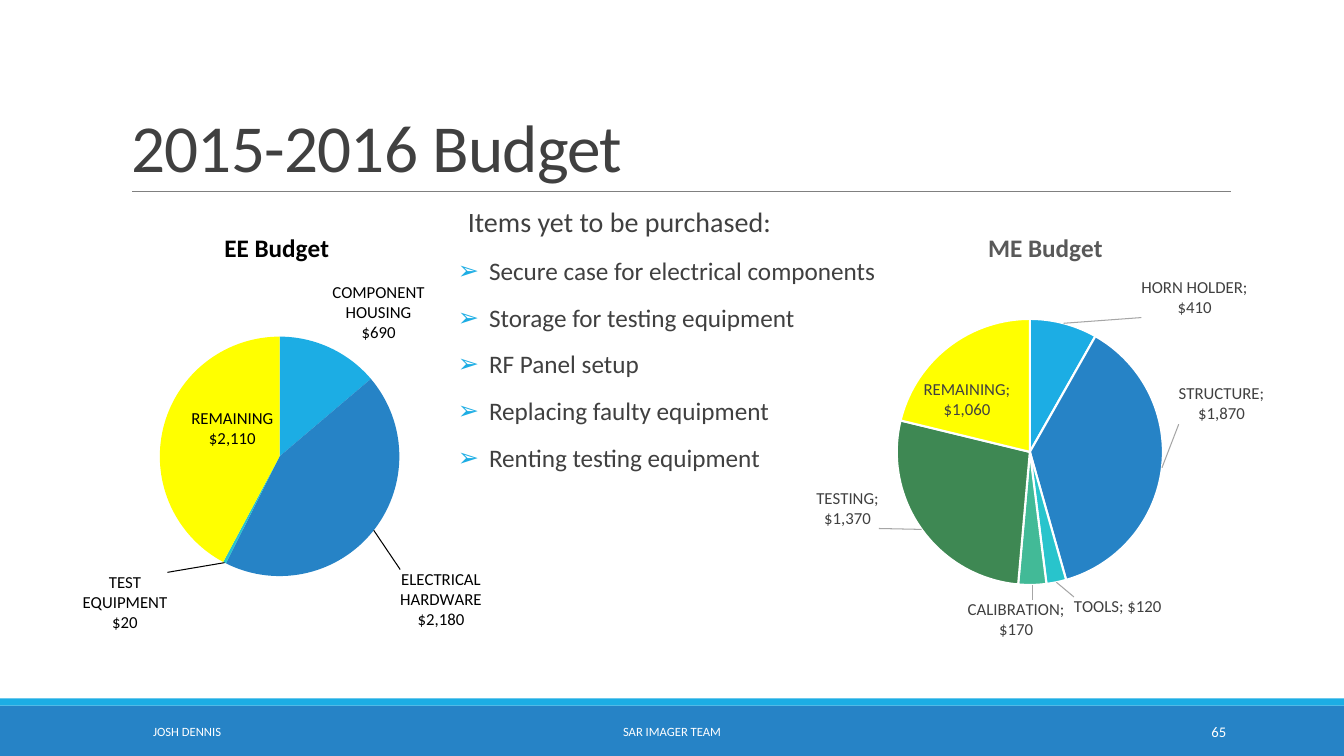
from lxml.etree import SubElement
from pptx import Presentation
from pptx.chart.data import CategoryChartData
from pptx.dml.color import RGBColor
from pptx.enum.chart import XL_CHART_TYPE, XL_LABEL_POSITION
from pptx.enum.shapes import MSO_CONNECTOR, MSO_SHAPE
from pptx.enum.text import MSO_ANCHOR, MSO_AUTO_SIZE, PP_ALIGN
from pptx.oxml import parse_xml
from pptx.oxml.ns import nsdecls, qn
from pptx.util import Inches, Pt

SKY = RGBColor(0x1C, 0xAD, 0xE4)
BLUE = RGBColor(0x26, 0x83, 0xC6)
AQUA = RGBColor(0x28, 0xC4, 0xCC)
MINT = RGBColor(0x42, 0xBA, 0x97)
GREEN = RGBColor(0x3E, 0x88, 0x53)
YELLOW = RGBColor(0xFF, 0xFF, 0x00)
BLACK = RGBColor(0x00, 0x00, 0x00)
DARK = RGBColor(0x40, 0x40, 0x40)
SLATE = RGBColor(0x59, 0x59, 0x59)
GRAY = RGBColor(0x80, 0x80, 0x80)
SILVER = RGBColor(0xA6, 0xA6, 0xA6)
WHITE = RGBColor(0xFF, 0xFF, 0xFF)

OUT, MIDDLE = XL_LABEL_POSITION.OUTSIDE_END, XL_LABEL_POSITION.CENTER
DOLLARS = '"$"#,##0'

EE_BUDGET = [
    ("COMPONENT HOUSING", 690, SKY, OUT, (0, 0)),
    ("ELECTRICAL HARDWARE", 2180, BLUE, OUT, (0.04, 0.08)),
    ("TEST EQUIPMENT", 20, AQUA, OUT, (-0.1, 0.01)),
    ("REMAINING", 2110, YELLOW, MIDDLE, (0.02, -0.03)),
]
ME_BUDGET = [
    ("HORN HOLDER", 410, SKY, OUT, (0.14, 0)),
    ("STRUCTURE", 1870, BLUE, OUT, (0.02, -0.19)),
    ("TOOLS", 120, AQUA, OUT, (0.03, 0.02)),
    ("CALIBRATION", 170, MINT, OUT, (-0.03, 0.02)),
    ("TESTING", 1370, GREEN, OUT, (-0.07, -0.1)),
    ("REMAINING", 1060, YELLOW, MIDDLE, (-0.04, 0)),
]
ITEMS = [
    "Secure case for electrical components",
    "Storage for testing equipment",
    "RF Panel setup",
    "Replacing faulty equipment",
    "Renting testing equipment",
]


def apply(target, **values):
    for name, value in values.items():
        setattr(target, name, value)


def layout_xml(modes="", **fractions):
    parts = [f'<c:{axis}Mode val="edge"/>' for axis in modes]
    parts += [f'<c:{name} val="{value}"/>' for name, value in fractions.items()]
    inner = "".join(parts)
    return parse_xml(f'<c:layout {nsdecls("c")}><c:manualLayout>{inner}</c:manualLayout></c:layout>')


class BudgetPage:
    font_name = "Calibri"

    def __init__(self, deck):
        self.page = deck.slides.add_slide(deck.slide_layouts[1])

    def style(self, font, size, color, bold=False):
        apply(font, name=self.font_name, size=Pt(size), bold=bold)
        font.color.rgb = color

    def place(self, box, left, top, width, height):
        apply(box, left=Inches(left), top=Inches(top), width=Inches(width), height=Inches(height))

    def bar(self, top, height, color):
        box = self.page.shapes.add_shape(
            MSO_SHAPE.RECTANGLE, 0, Inches(top), Inches(13.33), Inches(height))
        box.shadow.inherit = False
        box.fill.solid()
        box.fill.fore_color.rgb = color
        box.line.fill.background()

    def rule(self, left, right, top):
        line = self.page.shapes.add_connector(
            MSO_CONNECTOR.STRAIGHT, Inches(left), Inches(top), Inches(right), Inches(top))
        line.line.color.rgb = GRAY
        line.line.width = Pt(0.5)
        SubElement(line._element.spPr, qn("a:effectLst"))

    def title(self, text):
        box = self.page.shapes.title
        self.place(box, 1.2, 0.31, 11, 1.59)
        apply(box.text_frame, text=text, vertical_anchor=MSO_ANCHOR.BOTTOM,
              auto_size=MSO_AUTO_SIZE.NONE)
        para = box.text_frame.paragraphs[0]
        apply(para, alignment=PP_ALIGN.LEFT, line_spacing=0.85)
        span = para.runs[0]
        self.style(span.font, 48, DARK)
        span.font._element.set("spc", "-50")

    def bullets(self, heading, items):
        box = self.page.placeholders[1]
        self.place(box, 4.54, 2.02, 4.34, 3.59)
        frame = box.text_frame
        apply(frame, text="\n".join([heading, *items]), margin_left=0, margin_right=0,
              auto_size=MSO_AUTO_SIZE.NONE, vertical_anchor=MSO_ANCHOR.TOP)
        for index, para in enumerate(frame.paragraphs):
            size, indent, mark = (18, 0.31, "➢") if index else (20, 0.1, " ")
            apply(para, line_spacing=0.9, space_before=Pt(12), space_after=Pt(2))
            self.style(para.runs[0].font, size, DARK)
            properties = para._p.get_or_add_pPr()
            properties.set("marL", str(Inches(indent)))
            properties.set("indent", str(-Inches(indent)))
            color = SubElement(properties, qn("a:buClr"))
            SubElement(color, qn("a:srgbClr"), val=str(SKY))
            SubElement(properties, qn("a:buChar"), char=mark)

    def footer(self, text, left, width, size, alignment):
        box = self.page.shapes.add_textbox(
            Inches(left), Inches(7.06), Inches(width), Inches(0.4))
        apply(box.text_frame, text=text, word_wrap=True, vertical_anchor=MSO_ANCHOR.MIDDLE)
        para = box.text_frame.paragraphs[0]
        para.alignment = alignment
        self.style(para.runs[0].font, size, WHITE)

    def pie(self, title, slices, left, plot, title_left, title_color, label_color,
            leader_color, separator, edge=None):
        data = CategoryChartData(number_format=DOLLARS)
        data.categories = [entry[0] for entry in slices]
        data.add_series("Series 1", [entry[1] for entry in slices])
        chart = self.page.shapes.add_chart(
            XL_CHART_TYPE.PIE, Inches(left), Inches(2.02), Inches(5.4), Inches(4.4), data).chart
        apply(chart, has_legend=False, has_title=True)
        self.style(chart.font, 12, label_color)
        chart.chart_title.text_frame.text = title
        self.style(chart.chart_title.text_frame.paragraphs[0].runs[0].font, 18, title_color, True)
        chart.chart_title.include_in_layout = False
        space = chart._chartSpace
        space.find(qn("c:chart")).addnext(parse_xml(
            f'<c:spPr {nsdecls("c", "a")}><a:noFill/><a:ln><a:noFill/></a:ln></c:spPr>'))
        for old in space.xpath("c:chart/c:title/c:layout | .//c:plotArea/c:layout"):
            old.getparent().remove(old)
        space.xpath("c:chart/c:title/c:tx")[0].addnext(layout_xml("xy", x=title_left, y=0.05))
        area = layout_xml("xy", **dict(zip("xywh", plot)))
        area[0].insert(0, parse_xml(f'<c:layoutTarget {nsdecls("c")} val="inner"/>'))
        space.xpath(".//c:plotArea")[0].insert(0, area)
        chart.plots[0].vary_by_categories = True
        self.label(chart.plots[0].series[0], slices, label_color, leader_color, separator, edge)

    def label(self, series, slices, label_color, leader_color, separator, edge):
        labels = series.data_labels
        apply(labels, show_value=True, show_category_name=True,
              number_format=DOLLARS, number_format_is_linked=False)
        self.style(labels.font, 12, label_color)
        for index, (_, _, color, position, offset) in enumerate(slices):
            point = series.points[index]
            point.format.fill.solid()
            point.format.fill.fore_color.rgb = color
            if edge is None:
                point.format.line.fill.background()
            else:
                point.format.line.color.rgb = edge
                point.format.line.width = Pt(1.5)
            self.style(point.data_label.font, 12, label_color)
            point.data_label.position = position
            node = series._element.xpath(f".//c:dLbl[c:idx/@val='{index}']")[0]
            node.find(qn("c:showCatName")).set("val", "1")
            SubElement(node, qn("c:separator")).text = separator
            if any(offset):
                node.find(qn("c:idx")).addnext(layout_xml(x=offset[0], y=offset[1]))
        group = series._element.find(qn("c:dLbls"))
        for old in group.findall(qn("c:showLeaderLines")):
            group.remove(old)
        SubElement(group, qn("c:separator")).text = separator
        SubElement(group, qn("c:showLeaderLines"), val="1")
        group.append(parse_xml(
            f'<c:leaderLines {nsdecls("c", "a")}><c:spPr><a:ln w="9525"><a:solidFill>'
            f'<a:srgbClr val="{leader_color}"/></a:solidFill></a:ln></c:spPr></c:leaderLines>'))


def main():
    deck = Presentation()
    apply(deck, slide_width=Inches(13.33), slide_height=Inches(7.5))
    budget = BudgetPage(deck)
    budget.bar(7, 0.5, BLUE)
    budget.bar(6.93, 0.07, SKY)
    budget.rule(1.31, 12.21, 1.9)
    budget.title("2015-2016 Budget")
    budget.pie("EE Budget", EE_BUDGET, 0.02, (0.29, 0.3, 0.44, 0.54), 0.4,
               BLACK, BLACK, BLACK, "\n")
    budget.bullets("Items yet to be purchased:", ITEMS)
    budget.pie("ME Budget", ME_BUDGET, 7.65, (0.23, 0.26, 0.49, 0.6), 0.39,
               SLATE, DARK, SILVER, "; ", WHITE)
    budget.footer("SAR IMAGER TEAM", 4.03, 5.27, 9, PP_ALIGN.CENTER)
    budget.footer("65", 10.83, 1.43, 10.5, PP_ALIGN.RIGHT)
    budget.footer("JOSH DENNIS", 0.58, 2.55, 9, PP_ALIGN.CENTER)
    deck.save("out.pptx")


if __name__ == "__main__":
    main()
